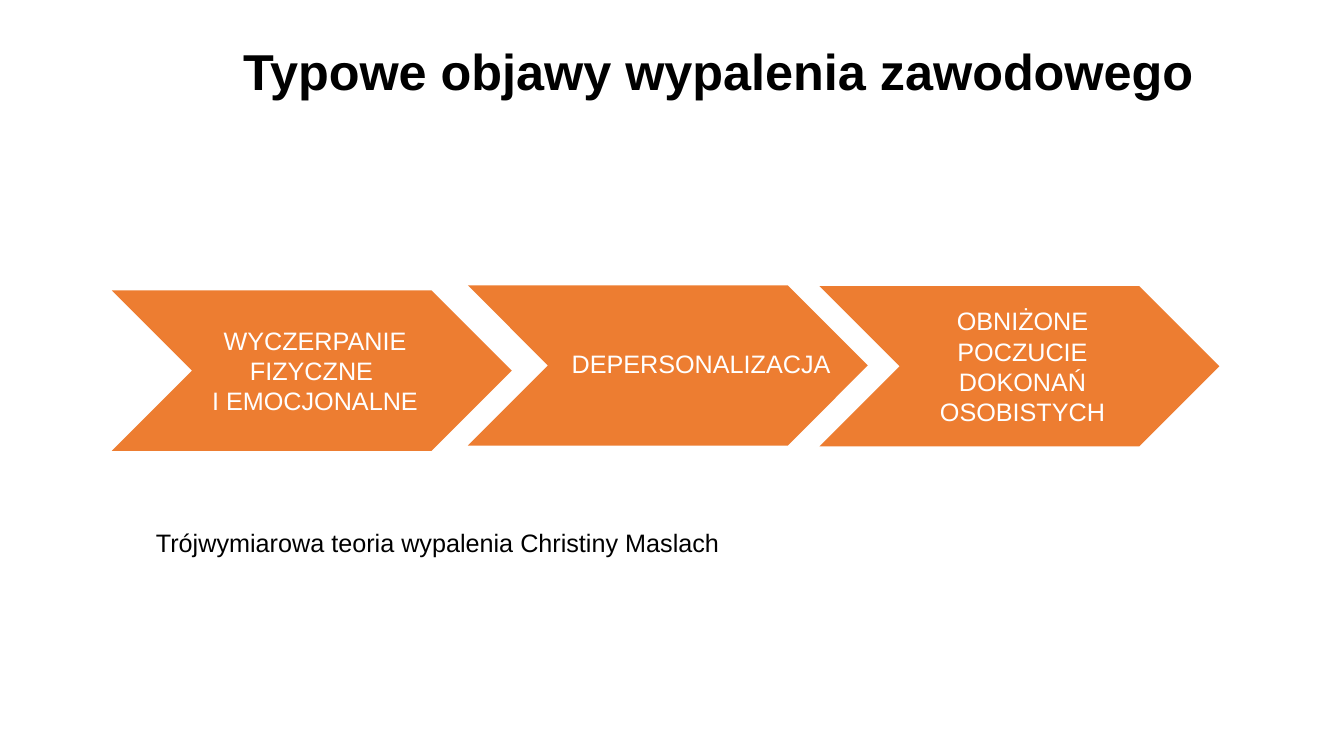
from pptx import Presentation
from pptx.dml.color import RGBColor
from pptx.enum.shapes import MSO_SHAPE
from pptx.enum.text import MSO_ANCHOR, PP_ALIGN
from pptx.util import Cm, Pt

CHEVRON = MSO_SHAPE.CHEVRON
MIDDLE, TOP = MSO_ANCHOR.MIDDLE, MSO_ANCHOR.TOP
CENTER, LEFT = PP_ALIGN.CENTER, PP_ALIGN.LEFT
TITLE_ONLY = 5
COLORS = {"text": "000000", "symptom": "ED7D31", "label": "FFFFFF"}
SYMPTOMS = [
    (2.82, 7.32, 6.05, 1, ["WYCZERPANIE FIZYCZNE ", "I EMOCJONALNE"]),
    (11.79, 7.19, 7.57, 0.9, ["DEPERSONALIZACJA"]),
    (20.65, 7.21, 6.05, 1, ["OBNIŻONE POCZUCIE DOKONAŃ OSOBISTYCH"]),
]


def write(sp, lines, size, color, align, anchor, margins, bold=False, spacing=1):
    """Fill a shape with one paragraph, one run per line."""
    tf = sp.text_frame
    tf.word_wrap = True
    tf.vertical_anchor = anchor
    tf.margin_left, tf.margin_top, tf.margin_right, tf.margin_bottom = map(Cm, margins)
    p = tf.paragraphs[0]
    p.alignment = align
    p.line_spacing = spacing
    for i, line in enumerate(lines):
        if i:
            p.add_line_break()
        r = p.add_run()
        r.text = line
        r.font.name = "Arial"
        r.font.size = Pt(size)
        r.font.bold = bold
        r.font.color.rgb = RGBColor.from_string(COLORS[color])


def add_title(slide, left, top, width, height):
    """Place the slide title in its placeholder."""
    sp = slide.shapes.title
    sp.left, sp.top, sp.width, sp.height = map(Cm, (left, top, width, height))
    write(sp, ["Typowe objawy wypalenia zawodowego"], 36, "text", CENTER, MIDDLE,
          (0.25, 0.13, 1.02, 0.13), bold=True, spacing=0.9)


def add_symptom(slide, left, top, width, height, label_width, spacing, lines):
    """Group a chevron with the label that starts at its notch."""
    group = slide.shapes.add_group_shape()
    sp = group.shapes.add_shape(CHEVRON, Cm(left), Cm(top), Cm(width), Cm(height))
    sp.adjustments[0] = 0.5
    sp.shadow.inherit = False
    sp.fill.solid()
    sp.fill.fore_color.rgb = RGBColor.from_string(COLORS["symptom"])
    sp.line.fill.background()
    label = group.shapes.add_textbox(Cm(left + height / 2), Cm(top),
                                     Cm(label_width), Cm(height))
    write(label, lines, 18, "label", CENTER, MIDDLE, (0.23, 0.08, 0.08, 0.08),
          spacing=spacing)


def add_caption(slide, left, top, width, height):
    """Name the theory below the chevrons."""
    sp = slide.shapes.add_textbox(Cm(left), Cm(top), Cm(width), Cm(height))
    write(sp, ["Trójwymiarowa teoria wypalenia Christiny Maslach"], 18, "text",
          LEFT, TOP, (0.25, 0.13, 0.25, 0.13))


def main():
    """Build and save the slide."""
    prs = Presentation()
    prs.slide_width, prs.slide_height = Cm(33.87), Cm(19.05)
    slide = prs.slides.add_slide(prs.slide_layouts[TITLE_ONLY])
    add_title(slide, 3.89, 1.37, 29.21, 1.02)
    for left, top, label_width, spacing, lines in SYMPTOMS:
        add_symptom(slide, left, top, 10.08, 4.04, label_width, spacing, lines)
    add_caption(slide, 3.68, 13.16, 25.04, 1.02)
    prs.save("out.pptx")


if __name__ == "__main__":
    main()
